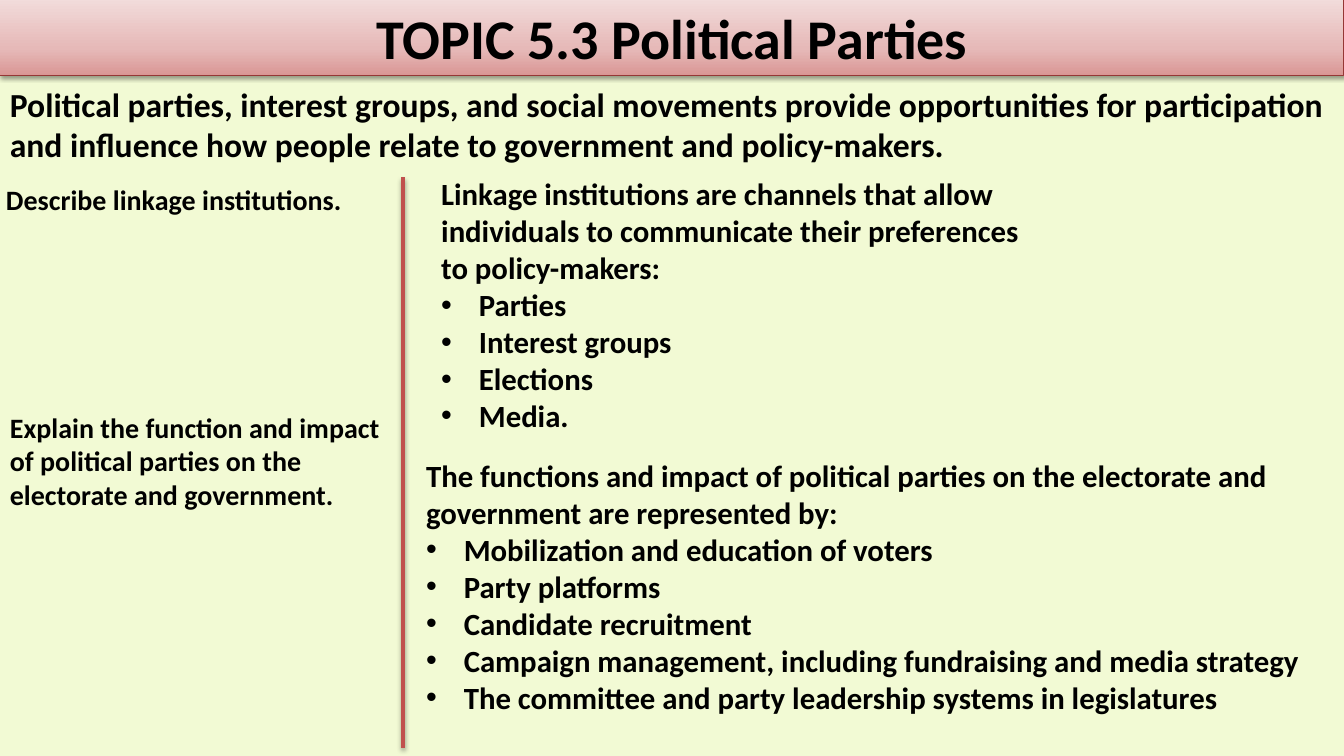
from dataclasses import dataclass

from lxml import etree
from pptx import Presentation
from pptx import util as u
from pptx.dml.color import RGBColor
from pptx.enum import shapes, text
from pptx.oxml.ns import qn


@dataclass(frozen=True)
class Theme:
    font: str = "Calibri"
    ink: str = "000000"
    background: str = "F2FAD4"
    banner_stops: tuple = ((0, "D99694"), (35, "E6B9B8"), (100, "F2DCDB"))
    banner_line: str = "953735"
    divider: str = "C0504D"
    title_size: int = 40
    summary_size: int = 24
    answer_size: int = 22
    objective_size: int = 20


@dataclass(frozen=True)
class TextBlock:
    left: float
    top: float
    width: float
    height: float
    size: int
    lines: tuple[str, ...]
    bullets: tuple[str, ...] = ()


THEME = Theme()
SLIDE_WIDTH, SLIDE_HEIGHT = 33.87, 19.05
BULLET_INDENT = u.Cm(0.95)

TITLE = TextBlock(0, -0.05, SLIDE_WIDTH, 1.96, THEME.title_size,
                  ("TOPIC 5.3 Political Parties",))
BLOCKS = (
    TextBlock(-0.1, 4.47, 10.59, 1.11, THEME.objective_size,
              ("Describe linkage institutions.",)),
    TextBlock(10.87, 4.29, 22.99, 6.83, THEME.answer_size,
              ("Linkage institutions are channels that allow",
               "individuals to communicate their preferences",
               "to policy-makers:"),
              ("Parties", "Interest groups", "Elections", "Media.")),
    TextBlock(0, 1.98, SLIDE_WIDTH, 2.31, THEME.summary_size,
              ("Political parties, interest groups, and social movements provide opportunities "
               "for participation and influence how people relate to government and "
               "policy-makers.",)),
    TextBlock(0, 10.21, 10.36, 2.82, THEME.objective_size,
              ("Explain the function and impact of political parties on the electorate "
               "and government.",)),
    TextBlock(10.49, 11.38, 22.86, 6.83, THEME.answer_size,
              ("The functions and impact of political parties on the electorate and "
               "government are represented by:",),
              ("Mobilization and education of voters", "Party platforms",
               "Candidate recruitment",
               "Campaign management, including fundraising and media strategy",
               "The committee and party leadership systems in legislatures")),
)


def color(value: str) -> RGBColor:
    return RGBColor.from_string(value)


def bounds(block: TextBlock) -> tuple:
    return tuple(u.Cm(n) for n in (block.left, block.top, block.width, block.height))


def add_color(parent, value: str):
    return etree.SubElement(parent, qn("a:srgbClr"), val=value)


def add_shadow(shape, distance: float, opacity: int) -> None:
    """Cast a soft shadow straight down; call after fill and line are set."""
    properties = shape._element.spPr
    effects = properties.find(qn("a:effectLst"))
    if effects is None:
        effects = etree.SubElement(properties, qn("a:effectLst"))
    shadow = etree.SubElement(effects, qn("a:outerShdw"), blurRad=str(u.Pt(3.1)),
                              dist=str(u.Pt(distance)), dir="5400000", rotWithShape="0")
    etree.SubElement(add_color(shadow, THEME.ink), qn("a:alpha"), val=str(opacity * 1000))


def fill_gradient(shape, stops: tuple) -> None:
    """Fill from the bottom edge to the top edge."""
    shape.fill.gradient()
    shape.fill.gradient_angle = 90
    stop_list = shape._element.spPr.find(f".//{qn('a:gsLst')}")
    for stop in list(stop_list):
        stop_list.remove(stop)
    for position, value in stops:
        add_color(etree.SubElement(stop_list, qn("a:gs"), pos=str(position * 1000)), value)


def add_bullet(paragraph) -> None:
    properties = paragraph._p.get_or_add_pPr()
    properties.set("marL", str(BULLET_INDENT))
    properties.set("indent", str(-BULLET_INDENT))
    etree.SubElement(properties, qn("a:buFont"), typeface="Arial")
    etree.SubElement(properties, qn("a:buChar"), char="•")


def write_text(shape, block: TextBlock, alignment=text.PP_ALIGN.LEFT) -> None:
    frame = shape.text_frame
    frame.word_wrap = True
    frame.auto_size = text.MSO_AUTO_SIZE.SHAPE_TO_FIT_TEXT
    frame.text = "\n".join(block.lines + block.bullets)
    for index, paragraph in enumerate(frame.paragraphs):
        paragraph.alignment = alignment
        if index >= len(block.lines):
            add_bullet(paragraph)
        for run in paragraph.runs:
            run.font.name = THEME.font
            run.font.size = u.Pt(block.size)
            run.font.bold = True
            run.font.color.rgb = color(THEME.ink)


def add_banner(slide, block: TextBlock) -> None:
    banner = slide.shapes.add_shape(shapes.MSO_SHAPE.RECTANGLE, *bounds(block))
    fill_gradient(banner, THEME.banner_stops)
    banner.line.color.rgb = color(THEME.banner_line)
    banner.line.width = u.Pt(0.75)
    banner.shadow.inherit = False
    add_shadow(banner, 1.6, 38)
    write_text(banner, block, text.PP_ALIGN.CENTER)


def add_divider(slide, x: float, top: float, bottom: float) -> None:
    divider = slide.shapes.add_connector(
        shapes.MSO_CONNECTOR.STRAIGHT, u.Cm(x), u.Cm(top), u.Cm(x), u.Cm(bottom))
    divider.line.color.rgb = color(THEME.divider)
    divider.line.width = u.Pt(3)
    add_shadow(divider, 1.8, 35)


def main() -> None:
    presentation = Presentation()
    presentation.slide_width = u.Cm(SLIDE_WIDTH)
    presentation.slide_height = u.Cm(SLIDE_HEIGHT)
    slide = presentation.slides.add_slide(presentation.slide_layouts[6])
    slide.background.fill.solid()
    slide.background.fill.fore_color.rgb = color(THEME.background)

    add_banner(slide, TITLE)
    add_divider(slide, 10.16, 4.47, 18.85)
    for block in BLOCKS:
        write_text(slide.shapes.add_textbox(*bounds(block)), block)
    presentation.save("out.pptx")


if __name__ == "__main__":
    main()
